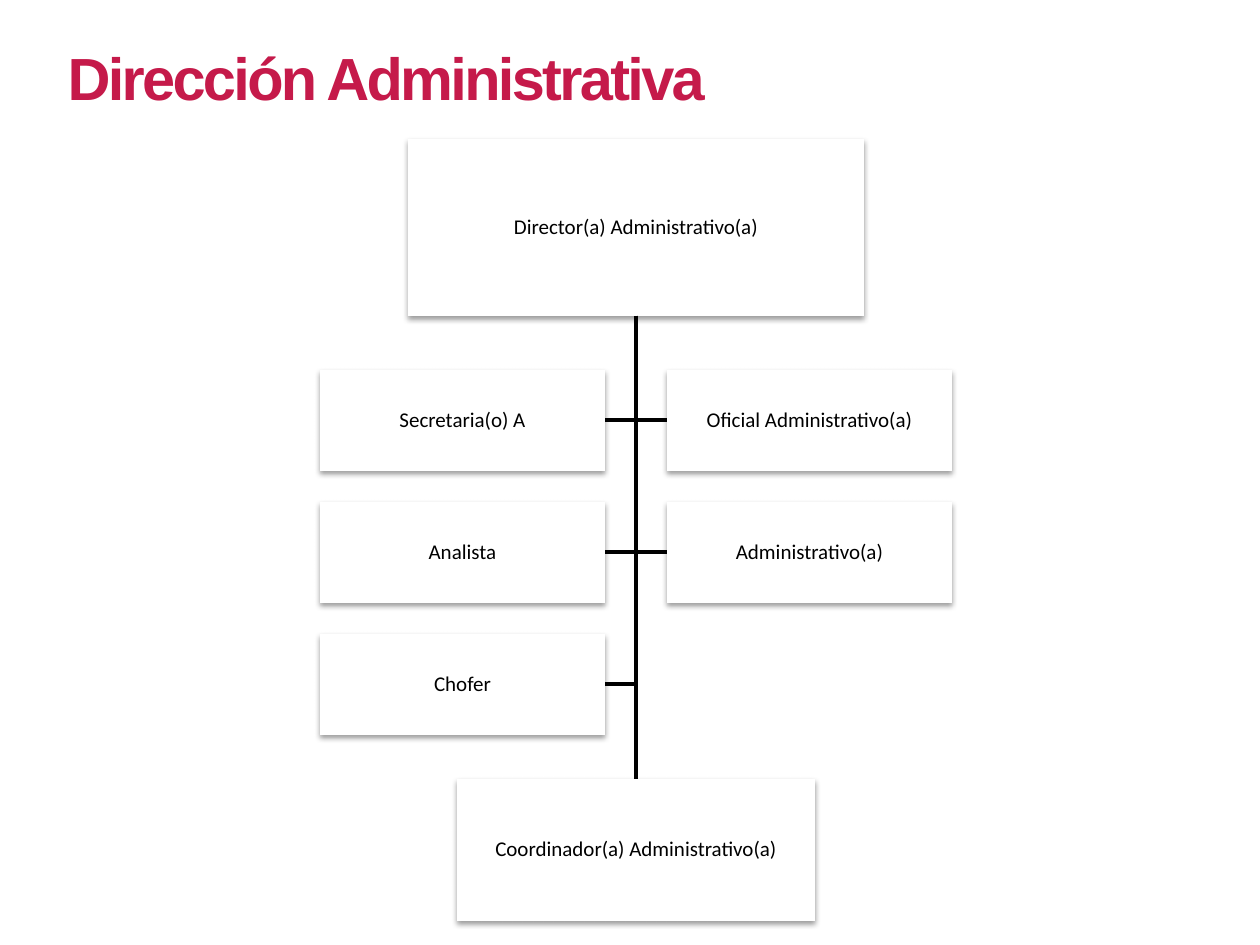
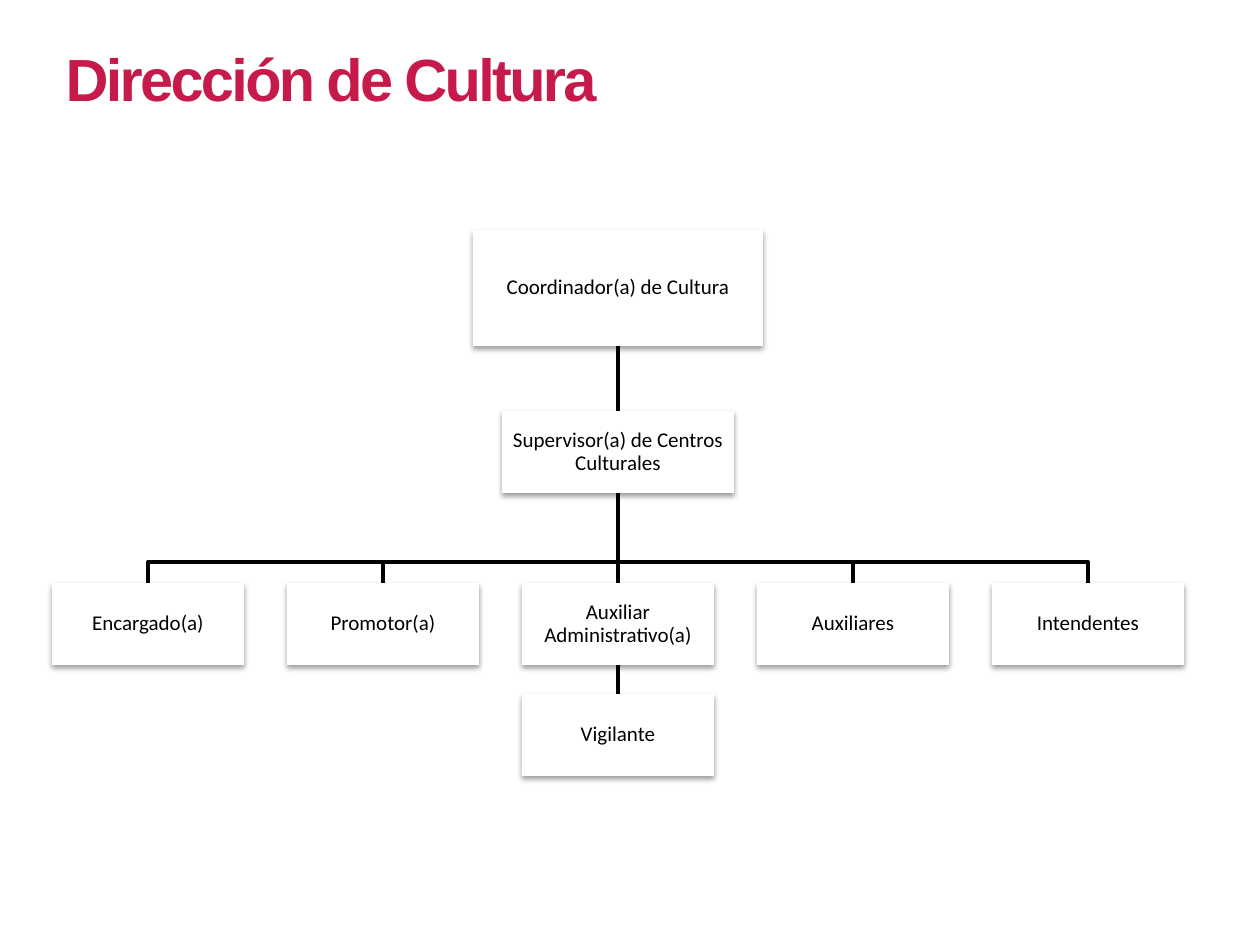
from lxml.etree import SubElement
from pptx import Presentation
from pptx.dml.color import RGBColor
from pptx.enum.shapes import MSO_CONNECTOR, MSO_SHAPE
from pptx.enum.text import MSO_ANCHOR, MSO_AUTO_SIZE, PP_ALIGN
from pptx.oxml.ns import qn
from pptx.util import Emu, Pt

PX = 914400 / 126
BLACK = RGBColor(0, 0, 0)
WHITE = RGBColor(255, 255, 255)
CRIMSON = RGBColor(0xC5, 0x1A, 0x4A)

TITLE_FONT = {"name": "Arial", "size": Pt(34), "bold": True}
BOX_FONT = {"name": "Calibri", "size": Pt(12), "bold": False}
TITLE_FRAME = {"word_wrap": True, "vertical_anchor": MSO_ANCHOR.TOP,
               "auto_size": MSO_AUTO_SIZE.SHAPE_TO_FIT_TEXT}
BOX_FRAME = {"word_wrap": True, "vertical_anchor": MSO_ANCHOR.MIDDLE,
             **{f"margin_{side}": Pt(0.75)
                for side in ("left", "top", "right", "bottom")}}
SHADOW = {"blurRad": "40000", "dist": "20000", "dir": "5400000",
          "rotWithShape": "0"}


def px(n):
    return Emu(round(n * PX))


def apply(target, values):
    for name, value in values.items():
        setattr(target, name, value)


def write(sp, text, frame, font, color, align, spacing):
    tf = sp.text_frame
    apply(tf, frame)
    p = tf.paragraphs[0]
    apply(p, {"alignment": align, "line_spacing": spacing})
    r = p.add_run()
    r.text = text
    apply(r.font, font)
    r.font.color.rgb = color
    return r


def add_slide(prs, title, left, top):
    slide = prs.slides.add_slide(prs.slide_layouts[5])
    sp = slide.shapes.title
    apply(sp, {"left": px(left), "top": px(top),
               "width": px(858), "height": px(87)})
    r = write(sp, title, TITLE_FRAME, TITLE_FONT, CRIMSON, PP_ALIGN.LEFT, 1.0)
    r.font._element.set("spc", "-150")
    return slide


def add_box(slide, text, left, top, width, height):
    sp = slide.shapes.add_shape(MSO_SHAPE.RECTANGLE, px(left), px(top),
                                px(width), px(height))
    sp.fill.solid()
    sp.fill.fore_color.rgb = WHITE
    sp.line.fill.background()
    sp.shadow.inherit = False
    effects = sp._element.spPr.find(qn("a:effectLst"))
    shadow = SubElement(effects, qn("a:outerShdw"), SHADOW)
    color = SubElement(shadow, qn("a:srgbClr"), val=str(BLACK))
    SubElement(color, qn("a:alpha"), val="38000")
    write(sp, text, BOX_FRAME, BOX_FONT, BLACK, PP_ALIGN.CENTER, 0.9)
    return sp


def style_line(sp):
    sp.line.color.rgb = BLACK
    sp.line.width = Pt(2)


def join_down(slide, upper, lower):
    line = slide.shapes.add_connector(MSO_CONNECTOR.STRAIGHT, 0, 0, 0, 0)
    line.begin_connect(upper, 2)
    line.end_connect(lower, 0)
    style_line(line)
    SubElement(line._element.spPr, qn("a:effectLst"))


def add_elbow(slide, start, *points):
    builder = slide.shapes.build_freeform(*start, scale=PX)
    builder.add_line_segments(points, close=False)
    sp = builder.convert_to_shape()
    sp.fill.background()
    sp.shadow.inherit = False
    style_line(sp)


def draw_side_chart(slide, left, top, width, height, head, foot, rows):
    center = left + width // 2
    head_w, head_h, foot_w, foot_h = 456, 177, 358, 142
    side_w, side_h, first_row, row_step = 285, 101, 231, 132
    head_box = add_box(slide, head, center - head_w // 2, top, head_w, head_h)
    foot_box = add_box(slide, foot, center - foot_w // 2,
                       top + height - foot_h, foot_w, foot_h)
    join_down(slide, head_box, foot_box)
    for i, row in enumerate(rows):
        y = top + first_row + i * row_step
        middle = y + side_h // 2
        sides = ((left, left + side_w),
                 (left + width - side_w, left + width - side_w))
        for text, (x, inner_edge) in zip(row, sides):
            add_elbow(slide, (center, top + head_h),
                      (center, middle), (inner_edge, middle))
            add_box(slide, text, x, y, side_w, side_h)


def draw_tree_chart(slide, left, top, width, height, head, deputy, staff, last):
    center = left + width // 2
    head_w, head_h, deputy_w, box_w, box_h = 290, 116, 232, 192, 82
    deputy_y, bus_y, staff_y = top + 181, top + 332, top + 353
    step = (width - box_w) // (len(staff) - 1)
    head_box = add_box(slide, head, center - head_w // 2, top, head_w, head_h)
    deputy_box = add_box(slide, deputy, center - deputy_w // 2, deputy_y,
                         deputy_w, box_h)
    last_box = add_box(slide, last, center - box_w // 2,
                       top + height - box_h, box_w, box_h)
    join_down(slide, head_box, deputy_box)
    for i, text in enumerate(staff):
        x = left + i * step
        middle = x + box_w // 2
        sp = add_box(slide, text, x, staff_y, box_w, box_h)
        if middle == center:
            join_down(slide, deputy_box, sp)
            join_down(slide, sp, last_box)
        else:
            add_elbow(slide, (center, deputy_y + box_h), (center, bus_y),
                      (middle, bus_y), (middle, staff_y))


def main():
    prs = Presentation()
    prs.slide_width, prs.slide_height = px(1260), px(945)

    slide = add_slide(prs, "Dirección Administrativa", 55, 35)
    draw_side_chart(slide, 320, 139, 632, 782,
                    "Director(a) Administrativo(a)",
                    "Coordinador(a) Administrativo(a)",
                    [("Secretaria(o) A", "Oficial Administrativo(a)"),
                     ("Analista", "Administrativo(a)"),
                     ("Chofer",)])

    slide = add_slide(prs, "Dirección de Cultura", 53, 36)
    draw_tree_chart(slide, 52, 230, 1132, 546,
                    "Coordinador(a) de Cultura",
                    "Supervisor(a) de Centros Culturales",
                    ["Encargado(a)", "Promotor(a)", "Auxiliar Administrativo(a)",
                     "Auxiliares", "Intendentes"],
                    "Vigilante")
    prs.save("out.pptx")


if __name__ == "__main__":
    main()
